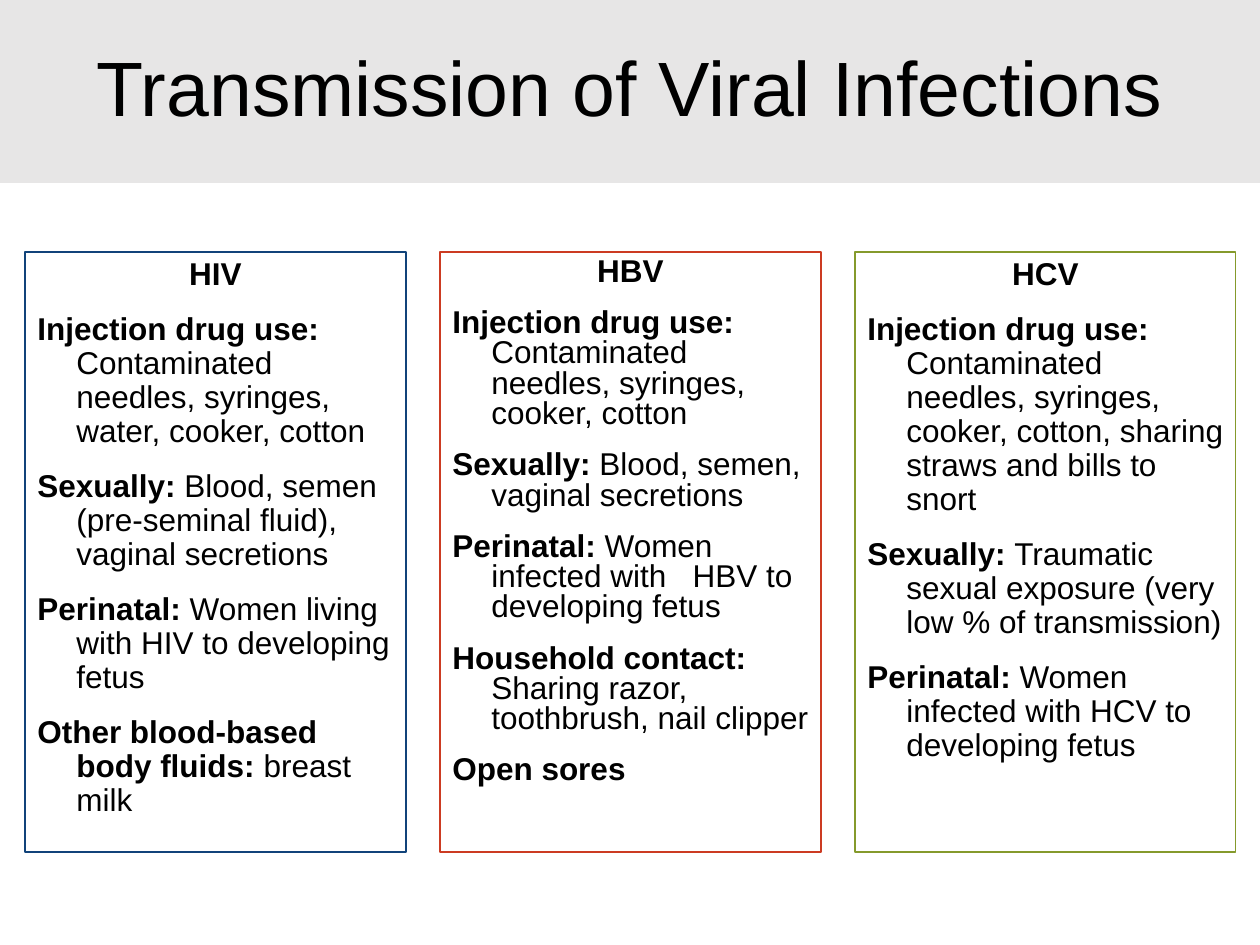
from dataclasses import dataclass

from pptx import Presentation
from pptx import util as u
from pptx.dml.color import RGBColor
from pptx.enum import shapes, text

PX = 914400 // 126  # EMU per px


@dataclass(frozen=True)
class Theme:
    font: str = "Arial"
    ink: str = "000000"
    banner: str = "E7E6E6"
    hiv: str = "11437A"
    hbv: str = "CC3B22"
    hcv: str = "859A2C"
    title_size: int = 44
    body_size: int = 18


class Deck:
    def __init__(self, theme):
        self.theme = theme
        self.prs = Presentation()
        self.prs.slide_width, self.prs.slide_height = u.Inches(10), u.Inches(7.5)
        self.slide = self.prs.slides.add_slide(self.prs.slide_layouts[6])

    def box(self, left, top, width, height, fill=None, line=None):
        shape = self.slide.shapes.add_shape(
            shapes.MSO_SHAPE.RECTANGLE, *(n * PX for n in (left, top, width, height)))
        shape.shadow.inherit = False
        if fill:
            shape.fill.solid()
            shape.fill.fore_color.rgb = RGBColor.from_string(fill)
        else:
            shape.fill.background()
        if line:
            shape.line.color.rgb = RGBColor.from_string(line)
            shape.line.width = u.Pt(0.75)
        else:
            shape.line.fill.background()
        shape.text_frame.word_wrap = True
        return shape.text_frame

    def style(self, paragraph, size, spacing, align):
        paragraph.alignment = align
        paragraph.line_spacing = spacing
        paragraph.font.name = self.theme.font
        paragraph.font.size = u.Pt(size)
        paragraph.font.color.rgb = RGBColor.from_string(self.theme.ink)

    def title(self, words, *area):
        frame = self.box(*area, fill=self.theme.banner)
        frame.vertical_anchor = text.MSO_ANCHOR.MIDDLE
        heading = frame.paragraphs[0]
        heading.text = words
        self.style(heading, self.theme.title_size, 0.9, text.PP_ALIGN.CENTER)

    def card(self, virus, routes, color, spacing, *area):
        frame = self.box(*area, line=color)
        frame.vertical_anchor = text.MSO_ANCHOR.TOP
        heading = frame.paragraphs[0]
        heading.text = virus
        heading.font.bold = True
        heading.space_after = u.Pt(6)
        self.style(heading, self.theme.body_size, spacing, text.PP_ALIGN.CENTER)
        for route, detail in routes:
            entry = frame.add_paragraph()
            entry.space_before = entry.space_after = u.Pt(6)
            # Hanging indent
            indent = entry._p.get_or_add_pPr()
            indent.set("marL", str(u.Inches(0.31)))
            indent.set("indent", str(-u.Inches(0.31)))
            self.style(entry, self.theme.body_size, spacing, text.PP_ALIGN.LEFT)
            label = entry.add_run()
            label.text = f"{route}: " if detail else route
            label.font.bold = True
            if detail:
                entry.add_run().text = detail


def main():
    theme = Theme()
    deck = Deck(theme)

    # Banner
    deck.title("Transmission of Viral Infections", 0, 0, 1260, 183)

    # One card per virus: name, outline, line spacing, routes
    viruses = [
        ("HIV", theme.hiv, 0.9, [
            ("Injection drug use", "Contaminated needles, syringes, water, cooker, cotton"),
            ("Sexually", "Blood, semen (pre-seminal fluid), vaginal secretions"),
            ("Perinatal", "Women living with HIV to developing fetus"),
            ("Other blood-based body fluids", "breast milk"),
        ]),
        ("HBV", theme.hbv, 0.8, [
            ("Injection drug use", "Contaminated needles, syringes, cooker, cotton"),
            ("Sexually", "Blood, semen, vaginal secretions"),
            ("Perinatal", "Women infected with   HBV to developing fetus"),
            ("Household contact", "Sharing razor, toothbrush, nail clipper"),
            ("Open sores", ""),
        ]),
        ("HCV", theme.hcv, 0.9, [
            ("Injection drug use", "Contaminated needles, syringes, cooker, cotton, "
                                   "sharing straws and bills to snort"),
            ("Sexually", "Traumatic sexual exposure (very low % of transmission)"),
            ("Perinatal", "Women infected with HCV to developing fetus"),
        ]),
    ]
    for column, (virus, color, spacing, routes) in enumerate(viruses):
        deck.card(virus, routes, color, spacing, 25 + 415 * column, 252, 381, 600)

    deck.prs.save("out.pptx")


if __name__ == "__main__":
    main()
